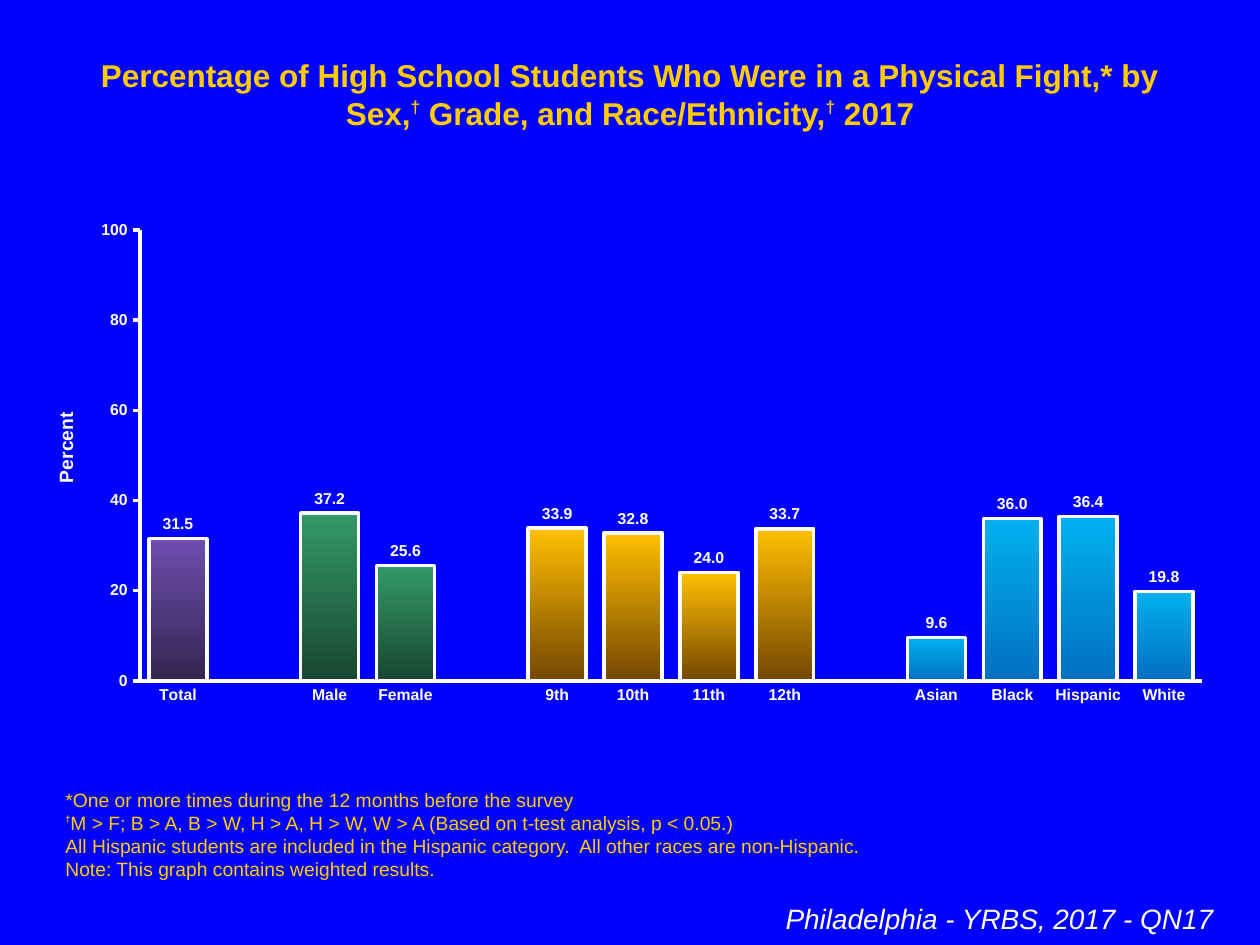
from lxml import etree
from pptx import Presentation
from pptx.chart import data
from pptx.dml.color import RGBColor
from pptx.enum import chart as ch, text
from pptx.oxml import ns
from pptx import util as u

PX = 914400 / 126
FONT = "Arial"
HUE = {"back": "0000FF", "gold": "FFCC00", "white": "FFFFFF"}
GRADES = {
    "total": ("6E4EAE", "33254F"),
    "sex": ("339966", "18472F"),
    "grade": ("FFC000", "744600"),
    "race": ("00B0F0", "0070C0"),
}
BARS = [
    ("total", [("Total", 31.5)]),
    ("sex", [("Male", 37.2), ("Female", 25.6)]),
    ("grade", [("9th", 33.9), ("10th", 32.8), ("11th", 24.0), ("12th", 33.7)]),
    ("race", [("Asian", 9.6), ("Black", 36.0), ("Hispanic", 36.4), ("White", 19.8)]),
]


def px(n):
    """Turn pixels into EMU."""
    return u.Emu(round(n * PX))


def rgb(code):
    """Turn a hex string into a colour."""
    return RGBColor.from_string(code)


def style(font, size, hue="white", bold=False, italic=False):
    """Set the look of a font."""
    font.name, font.size = FONT, u.Pt(size)
    font.bold, font.italic = bold, italic
    font.color.rgb = rgb(HUE[hue])


def write(slide, box, paras, size, align="LEFT", anchor="TOP", mark=(), **look):
    """Add a text box whose daggers are raised; mark is size, rise and weight."""
    frame = slide.shapes.add_textbox(*map(px, box)).text_frame
    frame.word_wrap = True
    frame.vertical_anchor = getattr(text.MSO_ANCHOR, anchor)
    for i, line in enumerate(paras):
        para = frame.paragraphs[0] if i == 0 else frame.add_paragraph()
        para.alignment = getattr(text.PP_ALIGN, align)
        for j, part in enumerate(line.split("†")):
            if j:
                run = para.add_run()
                run.text = "†"
                style(run.font, mark[0], **{**look, "bold": mark[2]})
                run._r.get_or_add_rPr().set("baseline", str(mark[1] * 1000))
            if part:
                run = para.add_run()
                run.text = part
                style(run.font, size, **look)


def place(node, spot, box, **vals):
    """Give a chart part a manual layout, as shares of the chart box."""
    for old in node.findall(ns.qn("c:layout")):
        node.remove(old)
    lay = etree.Element(ns.qn("c:layout"))
    man = etree.SubElement(lay, ns.qn("c:manualLayout"))
    if "w" in vals:
        etree.SubElement(man, ns.qn("c:layoutTarget"), val="inner")
    for key in ("xMode", "yMode"):
        etree.SubElement(man, ns.qn("c:" + key), val="edge")
    for key, val in vals.items():
        full = box[2] if key in "xw" else box[3]
        etree.SubElement(man, ns.qn("c:" + key), val=f"{val / full:.4f}")
    node.insert(spot, lay)


def edge(line):
    """Draw a white two-point line."""
    line.color.rgb = rgb(HUE["white"])
    line.width = u.Pt(2)


def axes(chart, box):
    """Format both axes and the value title."""
    cat, val = chart.category_axis, chart.value_axis
    for axis, tick in ((cat, "NONE"), (val, "OUTSIDE")):
        axis.has_major_gridlines = False
        axis.major_tick_mark = getattr(ch.XL_TICK_MARK, tick)
        axis.minor_tick_mark = ch.XL_TICK_MARK.NONE
        style(axis.tick_labels.font, 9, bold=True)
        edge(axis.format.line)
    val.minimum_scale, val.maximum_scale, val.major_unit = 0, 100, 20
    title = val.axis_title
    frame = title.text_frame
    frame.text = "Percent"
    style(frame.paragraphs[0].runs[0].font, 11, bold=True)
    frame._txBody.bodyPr.set("rot", "-5400000")
    place(title._element, 1, box, x=28, y=198)


def graph(slide, box):
    """Add the column chart, one shade for each group."""
    rows = []
    for kind, group in BARS:
        rows += [(None, "", None)] if rows else []
        rows += [(kind, name, val) for name, val in group]
    info = data.CategoryChartData(number_format="General")
    info.categories = [name for _, name, _ in rows]
    info.add_series("Series 1", [val for _, _, val in rows])
    kind = ch.XL_CHART_TYPE.COLUMN_CLUSTERED
    chart = slide.shapes.add_chart(kind, *map(px, box), info).chart
    chart.has_legend = chart.has_title = False
    style(chart.font, 18)
    plot = chart.plots[0]
    plot.gap_width, plot.overlap, plot.vary_by_categories = 31, 100, False
    plot.has_data_labels = True
    tags = plot.data_labels
    tags.show_value = True
    tags.number_format, tags.number_format_is_linked = "#,##0.0", False
    tags.position = ch.XL_LABEL_POSITION.OUTSIDE_END
    style(tags.font, 9, bold=True)
    bars = plot.series[0]
    edge(bars.format.line)
    for i, (kind, _, _) in enumerate(rows):
        if kind:
            form = bars.points[i].format
            form.fill.gradient()
            form.fill.gradient_angle = 270
            for stop, code in zip(form.fill.gradient_stops, GRADES[kind]):
                stop.color.rgb = rgb(code)
            edge(form.line)
    axes(chart, box)
    area = chart._chartSpace.find(".//" + ns.qn("c:plotArea"))
    place(area, 0, box, x=119, y=20, w=1062, h=451)


def main():
    """Build and save the slide."""
    deck = Presentation()
    deck.slide_width, deck.slide_height = px(1260), px(945)
    slide = deck.slides.add_slide(deck.slide_layouts[6])
    slide.background.fill.solid()
    slide.background.fill.fore_color.rgb = rgb(HUE["back"])
    head = ("Percentage of High School Students Who Were in a Physical Fight,* "
            "by Sex,† Grade, and Race/Ethnicity,† 2017")
    notes = [
        "*One or more times during the 12 months before the survey",
        "†M > F; B > A, B > W, H > A, H > W, W > A (Based on t-test analysis, p < 0.05.)",
        "All Hispanic students are included in the Hispanic category.  "
        "All other races are non-Hispanic.",
        "Note: This graph contains weighted results.",
    ]
    write(slide, (63, 50, 1134, 50), [head], 18, "CENTER", hue="gold",
          bold=True, mark=(17, 40, True))
    write(slide, (53, 850, 1155, 37), notes, 11, anchor="BOTTOM", hue="gold",
          mark=(9, 50, True))
    write(slide, (42, 895, 1184, 47), ["Philadelphia - YRBS, 2017 - QN17"], 16,
          "RIGHT", italic=True)
    graph(slide, (21, 210, 1205, 504))
    deck.save("out.pptx")


if __name__ == "__main__":
    main()
